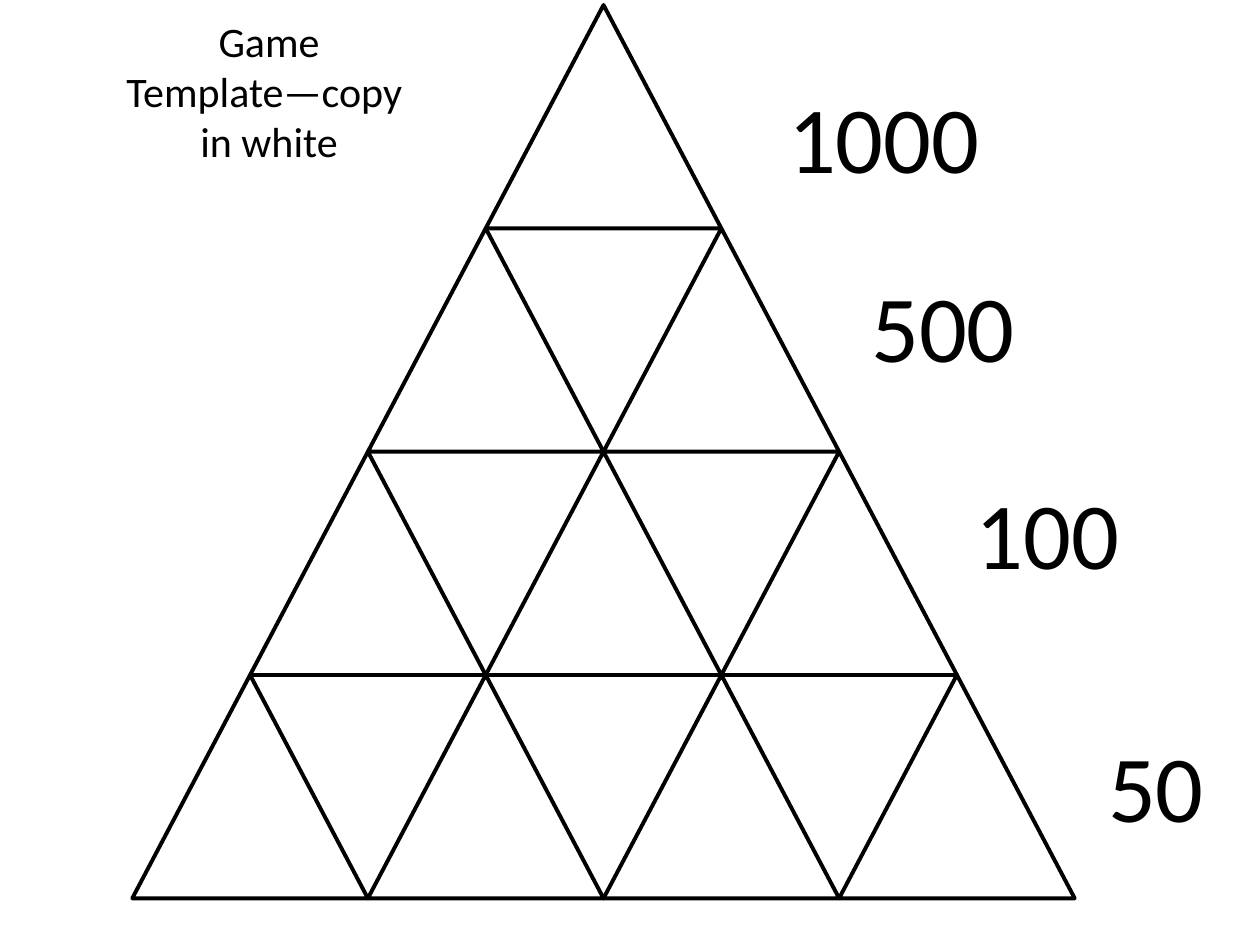
from pptx import Presentation
from pptx.dml.color import RGBColor
from pptx.enum.shapes import MSO_SHAPE
from pptx.enum.text import MSO_AUTO_SIZE, PP_ALIGN
from pptx.util import Inches, Pt

BLACK, WHITE = "000000", "FFFFFF"

# Pyramid geometry in inches
ROWS = 4
APEX_X, TOP, BOTTOM = 4.79, 0.04, 7.13
CELL_WIDTH = 1.87
CELL_HEIGHT = (BOTTOM - TOP) / ROWS

# Points for each row: text, left, top
SCORES = [("1000", 5.33, 0.58), ("500", 5.8, 2.08),
          ("100", 6.63, 3.72), ("50", 7.49, 5.73)]


def color(value):
    return RGBColor.from_string(value)


def add_triangle(page, left, top):
    triangle = page.shapes.add_shape(
        MSO_SHAPE.ISOSCELES_TRIANGLE, Inches(left), Inches(top),
        Inches(CELL_WIDTH), Inches(CELL_HEIGHT))
    triangle.shadow.inherit = False
    triangle.fill.solid()
    triangle.fill.fore_color.rgb = color(WHITE)
    triangle.line.color.rgb = color(BLACK)
    triangle.line.width = Pt(2.25)


def add_pyramid(page):
    for row in range(ROWS):
        row_left = APEX_X - (row + 1) * CELL_WIDTH / 2
        for column in range(row + 1):
            add_triangle(page, row_left + column * CELL_WIDTH,
                         TOP + row * CELL_HEIGHT)


def add_text(page, lines, left, top, width, height, size=24, wrap=True):
    box = page.shapes.add_textbox(
        Inches(left), Inches(top), Inches(width), Inches(height))
    frame = box.text_frame
    frame.word_wrap = wrap
    frame.auto_size = MSO_AUTO_SIZE.SHAPE_TO_FIT_TEXT
    frame.text = "\n".join(lines)
    for para in frame.paragraphs:
        para.alignment = PP_ALIGN.CENTER
        for span in para.runs:
            span.font.name = "Calibri"
            span.font.size = Pt(size)
            span.font.color.rgb = color(BLACK)


def main():
    deck = Presentation()
    deck.slide_width, deck.slide_height = Inches(10), Inches(7.5)
    page = deck.slides.add_slide(deck.slide_layouts[6])

    # Game board
    add_pyramid(page)

    # Row scores
    for score, left, top in SCORES:
        add_text(page, [score], left, top, 3.37, 1.01, size=54)

    # Caption
    add_text(page, ["Game", "Template—copy ", "in white"],
             0.89, 0.07, 2.49, 1.31, wrap=False)

    deck.save("out.pptx")


if __name__ == "__main__":
    main()
